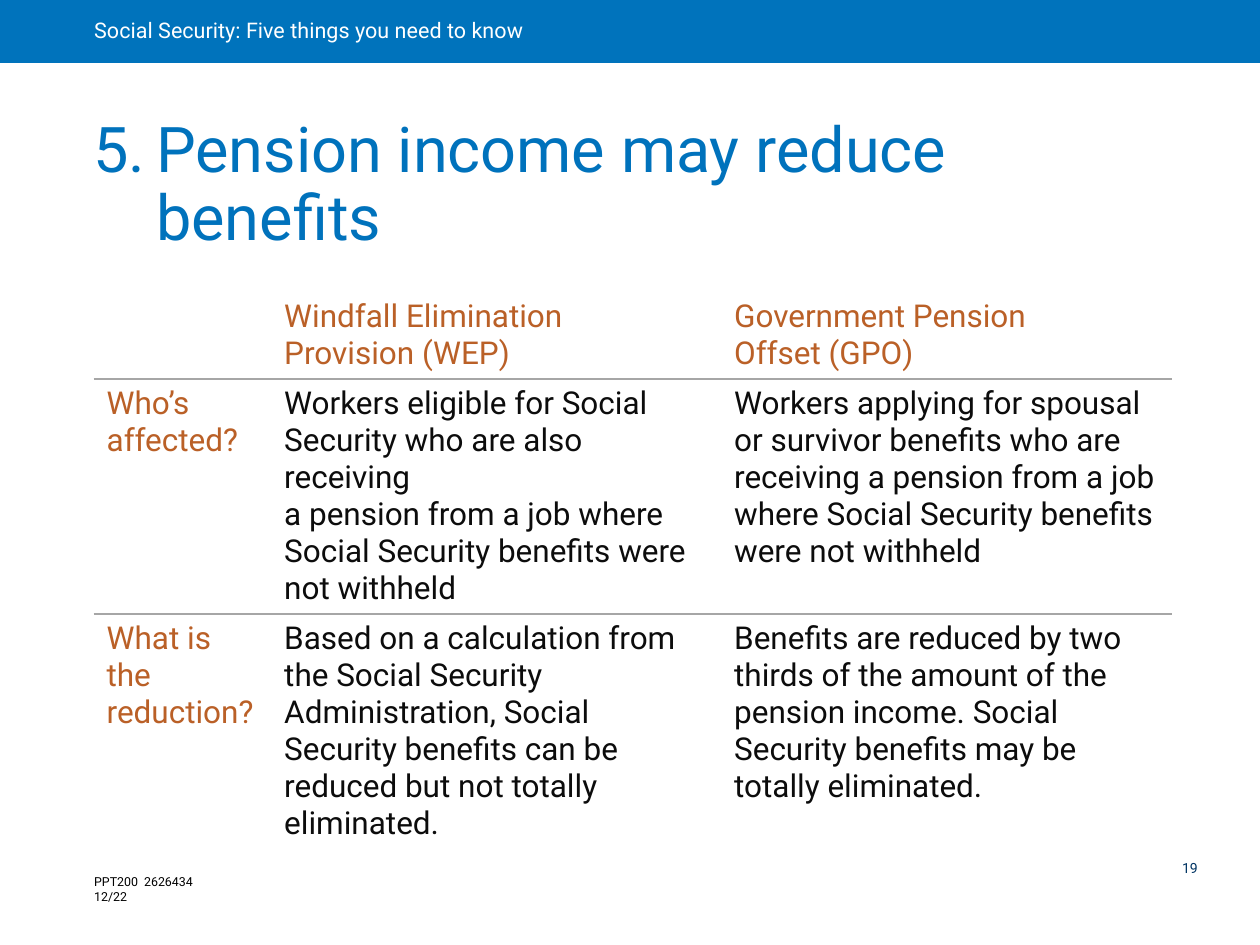
from lxml.etree import SubElement
from pptx import Presentation
from pptx.dml.color import RGBColor
from pptx.enum.shapes import MSO_SHAPE
from pptx.enum.text import MSO_ANCHOR, MSO_AUTO_SIZE, PP_ALIGN
from pptx.oxml.ns import qn
from pptx.util import Cm, Pt

FONT = "Roboto"
BLUE, BAND_BLUE, NAVY = "0072BC", "0073BC", "003463"
ORANGE, INK, GREY = "BA6027", "0C0C0C", "A6A6A6"
BLACK, WHITE = "000000", "FFFFFF"

BANNER = "Social Security: Five things you need to know"
TITLE = "5.\tPension income may reduce benefits"
FORM_CODE = "PPT200  2626434\v12/22"
PAGE_NUMBER = "19"
ROWS = [
    ("", "Windfall Elimination \vProvision (WEP)", "Government Pension \vOffset (GPO)"),
    ("Who’s affected?",
     "Workers eligible for Social Security who are also receiving \va pension from a job "
     "where Social Security benefits were \vnot withheld",
     "Workers applying for spousal \vor survivor benefits who are receiving a pension "
     "from a job where Social Security benefits were not withheld"),
    ("What is the reduction?",
     "Based on a calculation from the Social Security Administration, Social Security "
     "benefits can be reduced but not totally eliminated.",
     "Benefits are reduced by two thirds of the amount of the pension income. Social "
     "Security benefits may be totally eliminated."),
]
COLUMN_WIDTHS = (3.58, 9.07, 9.07)
ROW_HEIGHTS = (1.73, 4.72, 4.72)


def rgb(color):
    return RGBColor.from_string(color)


def write(frame, text, size, color, spacing=None):
    frame.text = text
    for paragraph in frame.paragraphs:
        paragraph.alignment = PP_ALIGN.LEFT
        paragraph.line_spacing = spacing
        for run in paragraph.runs:
            run.font.name = FONT
            run.font.size = Pt(size)
            run.font.color.rgb = rgb(color)


def set_margins(frame, left, top, right, bottom):
    frame.margin_left, frame.margin_top = Cm(left), Cm(top)
    frame.margin_right, frame.margin_bottom = Cm(right), Cm(bottom)


def add_rule(cell, side):
    """Draw a grey border on one side of a cell: lnT or lnB."""
    line = SubElement(cell._tc.get_or_add_tcPr(), qn(f"a:{side}"), w=str(Pt(1.5)))
    fill = SubElement(line, qn("a:solidFill"))
    SubElement(fill, qn("a:srgbClr"), val=GREY)


def add_banner(slide, width):
    banner = slide.shapes.add_shape(MSO_SHAPE.RECTANGLE, 0, 0, width, Cm(1.27))
    banner.shadow.inherit = False
    banner.fill.solid()
    banner.fill.fore_color.rgb = rgb(BAND_BLUE)
    banner.line.fill.background()
    frame = banner.text_frame
    frame.vertical_anchor = MSO_ANCHOR.MIDDLE
    set_margins(frame, 1.9, 0, 0.56, 0)
    write(frame, BANNER, 12.3, WHITE, 0.9)


def format_title(title):
    title.left, title.top, title.width, title.height = Cm(1.6), Cm(4.52), Cm(21.9), Cm(0.76)
    frame = title.text_frame
    frame.auto_size = MSO_AUTO_SIZE.NONE
    frame.word_wrap = True
    frame.vertical_anchor = MSO_ANCHOR.BOTTOM
    set_margins(frame, 0.28, 0.15, 0.28, 0.15)
    write(frame, TITLE, 36, BLUE, 0.9)
    properties = frame.paragraphs[0]._p.get_or_add_pPr()
    properties.set("marL", str(Cm(1.27)))
    properties.set("indent", str(-Cm(1.27)))


def add_comparison(slide):
    table = slide.shapes.add_table(
        len(ROWS), len(COLUMN_WIDTHS), Cm(1.9), Cm(5.89),
        Cm(sum(COLUMN_WIDTHS)), Cm(sum(ROW_HEIGHTS))).table
    table.first_row = table.horz_banding = False
    for column, width in zip(table.columns, COLUMN_WIDTHS):
        column.width = Cm(width)
    for r, (texts, height) in enumerate(zip(ROWS, ROW_HEIGHTS)):
        table.rows[r].height = Cm(height)
        for c, text in enumerate(texts):
            cell = table.cell(r, c)
            set_margins(cell, 0.25, 0.13, 0.25, 0.13)
            cell.vertical_anchor = MSO_ANCHOR.TOP if r else MSO_ANCHOR.BOTTOM
            write(cell.text_frame, text, 18, INK if r and c else ORANGE)
            if r > 0:
                add_rule(cell, "lnT")
            if r < len(ROWS) - 1:
                add_rule(cell, "lnB")
            cell.fill.background()


def add_note(slide, text, box, margins, size, color, spacing=None):
    frame = slide.shapes.add_textbox(*map(Cm, box)).text_frame
    frame.word_wrap = True
    set_margins(frame, *margins)
    write(frame, text, size, color, spacing)


def main():
    deck = Presentation()
    deck.slide_width, deck.slide_height = Cm(25.4), Cm(19.05)
    slide = deck.slides.add_slide(deck.slide_layouts[5])
    add_banner(slide, deck.slide_width)
    format_title(slide.shapes.title)
    add_comparison(slide)
    add_note(slide, FORM_CODE, (1.65, 17.5, 2.95, 0.86), (0.25, 0.13, 0.25, 0.13), 7.1, BLACK)
    add_note(slide, PAGE_NUMBER, (23.5, 17.27, 1.27, 0.53), (0.33, 0.1, 0.1, 0.1), 8, NAVY, 0.9)
    deck.save("out.pptx")


if __name__ == "__main__":
    main()
